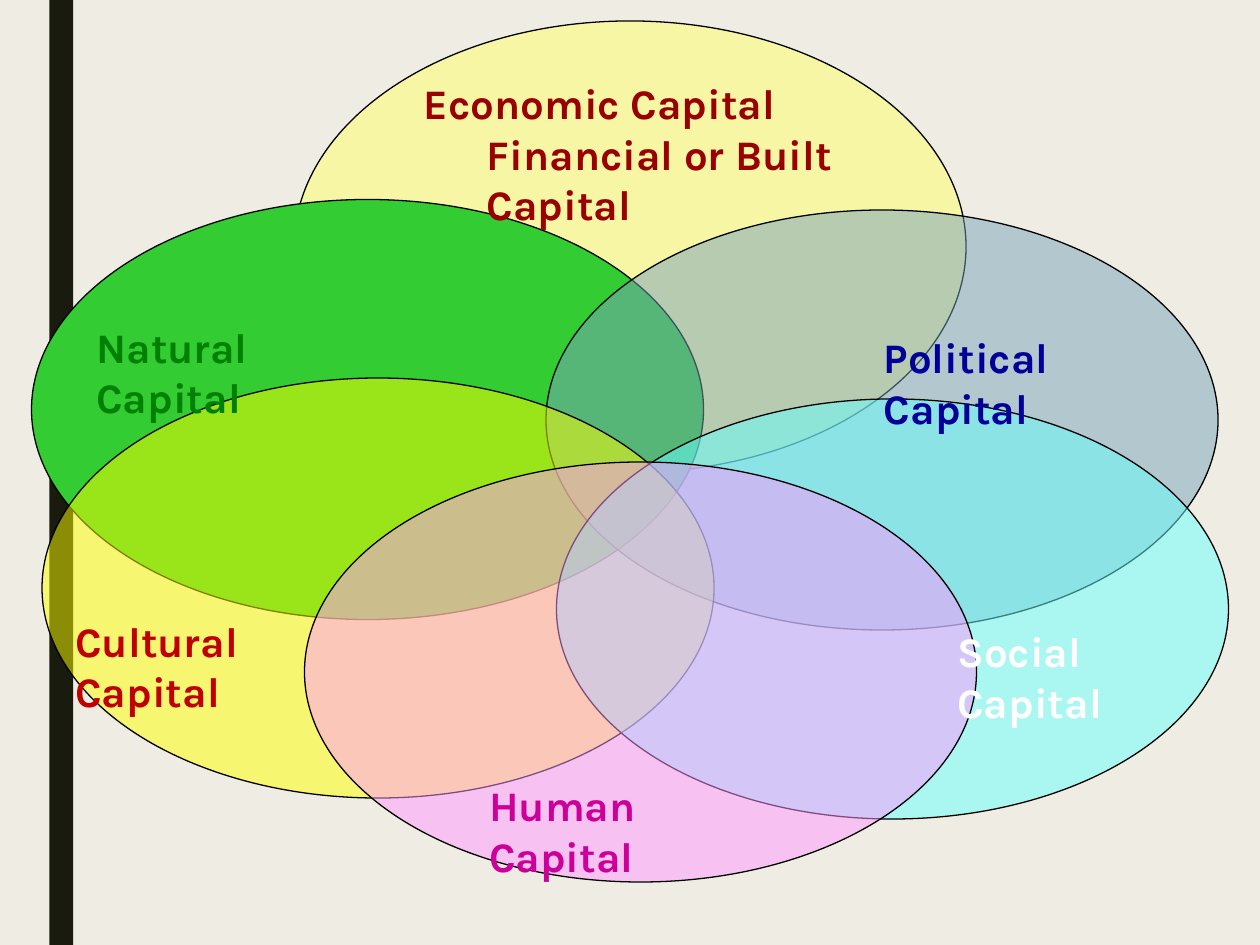
"""Build a slide of six overlapping community capitals."""
from dataclasses import dataclass

from lxml import etree
from pptx import Presentation
from pptx.dml.color import RGBColor
from pptx.enum.shapes import MSO_SHAPE
from pptx.enum.text import MSO_AUTO_SIZE
from pptx.oxml.ns import qn
from pptx.util import Pt

OVAL, RECT = MSO_SHAPE.OVAL, MSO_SHAPE.RECTANGLE
GROW = MSO_AUTO_SIZE.SHAPE_TO_FIT_TEXT


@dataclass(frozen=True)
class Theme:
    background: str = "EFEDE3"
    bar: str = "191B0E"
    outline: str = "000000"
    outline_width: float = 0.75
    font: str = "Karla"
    size: float = 24
    oval_width: float = 384
    oval_height: float = 240
    label_height: float = 36


@dataclass(frozen=True)
class Oval:
    left: float
    top: float
    color: str
    height: float = Theme.oval_height
    alpha: int = 50


@dataclass(frozen=True)
class Label:
    text: str
    left: float
    top: float
    width: float
    color: str
    height: float = Theme.label_height
    hanging: float = 0


THEME = Theme()
OVALS = [
    Oval(168, 12, "FFFF66", height=258),
    Oval(18, 114, "33CC33", alpha=100),
    Oval(312, 120, "77A2BB"),
    Oval(24, 216, "FFFF00"),
    Oval(318, 228, "66FFFF"),
    Oval(174, 264, "FF99FF"),
]
LABELS = [
    Label("Political Capital", 498, 186, 186, "000099"),
    Label("Cultural Capital", 36, 348, 192, "C00000"),
    Label("Natural Capital", 48, 180, 186, "008000"),
    Label("Human Capital", 272.4, 442, 178, "CC0099"),
    Label("Economic Capital Financial or Built Capital", 235, 41, 263.5,
          "990000", height=94.5, hanging=36),
    Label("Social Capital", 540, 354, 162, "FFFFFF"),
]


def add_filled(s, kind, left: float, top: float, width: float, height: float, color: str):
    """Add a preset shape with a plain fill and no shadow."""
    sp = s.shapes.add_shape(kind, Pt(left), Pt(top), Pt(width), Pt(height))
    sp.shadow.inherit = False
    sp.fill.solid()
    sp.fill.fore_color.rgb = RGBColor.from_string(color)
    return sp


def add_oval(s, oval: Oval) -> None:
    """Add one outlined oval, see-through where its alpha is below 100."""
    sp = add_filled(s, OVAL, oval.left, oval.top, THEME.oval_width, oval.height, oval.color)
    sp.line.color.rgb = RGBColor.from_string(THEME.outline)
    sp.line.width = Pt(THEME.outline_width)
    if oval.alpha < 100:
        clr = sp._element.spPr.find(qn("a:solidFill")).find(qn("a:srgbClr"))
        etree.SubElement(clr, qn("a:alpha")).set("val", str(oval.alpha * 1000))


def add_label(s, label: Label) -> None:
    """Add the name of one capital."""
    sp = s.shapes.add_textbox(Pt(label.left), Pt(label.top), Pt(label.width), Pt(label.height))
    tf = sp.text_frame
    tf.word_wrap = True
    tf.auto_size = GROW
    p = tf.paragraphs[0]
    if label.hanging:
        pPr = p._p.get_or_add_pPr()
        pPr.set("marL", str(Pt(label.hanging)))
        pPr.set("indent", str(-Pt(label.hanging)))
    r = p.add_run()
    r.text = label.text
    for name, value in {"name": THEME.font, "size": Pt(THEME.size), "bold": True}.items():
        setattr(r.font, name, value)
    r.font.color.rgb = RGBColor.from_string(label.color)


def main() -> None:
    """Draw the slide and save it."""
    prs = Presentation()
    prs.slide_width, prs.slide_height = Pt(720), Pt(540)
    s = prs.slides.add_slide(prs.slide_layouts[6])
    s.background.fill.solid()
    s.background.fill.fore_color.rgb = RGBColor.from_string(THEME.background)
    bar = add_filled(s, RECT, 28.2, 0, 13.6, 540, THEME.bar)
    bar.line.fill.background()
    for oval in OVALS:
        add_oval(s, oval)
    for label in LABELS:
        add_label(s, label)
    prs.save("out.pptx")


if __name__ == "__main__":
    main()
